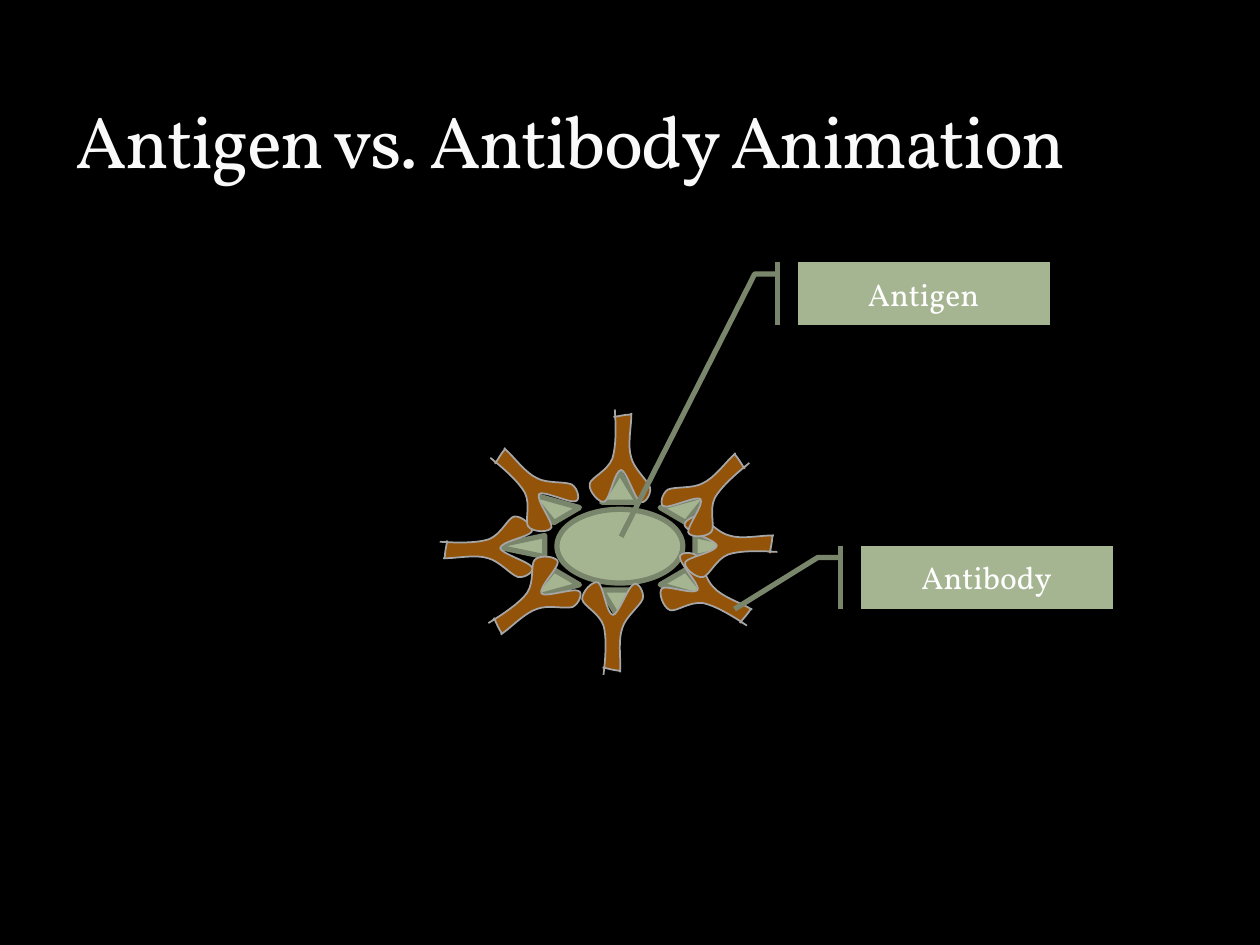
from lxml.etree import SubElement
from pptx import Presentation
from pptx.dml.color import RGBColor
from pptx.enum.shapes import MSO_SHAPE
from pptx.enum.text import MSO_ANCHOR, PP_ALIGN
from pptx.oxml.ns import qn
from pptx.util import Inches, Pt

BLACK = RGBColor(0x00, 0x00, 0x00)
TITLE_WHITE = RGBColor(0xF9, 0xF9, 0xF9)
WHITE = RGBColor(0xFF, 0xFF, 0xFF)
GREEN = RGBColor(0xA5, 0xB5, 0x92)
GREEN_LINE = RGBColor(0x7A, 0x86, 0x6C)
BROWN = RGBColor(0x93, 0x54, 0x0A)
GREY = RGBColor(0xA6, 0xA6, 0xA6)
FONT = "Vollkorn"

# Upright antibody, in inches: a start point, then Bezier segments
ANTIBODY_W, ANTIBODY_H = 0.5, 0.76
ANTIBODY_START = (0.20, 0.70)
ANTIBODY_CURVES = [
    ((0.25, 0.71), (0.30, 0.72), (0.33, 0.72)),
    ((0.35, 0.72), (0.34, 0.75), (0.34, 0.69)),
    ((0.34, 0.63), (0.31, 0.47), (0.34, 0.38)),
    ((0.36, 0.29), (0.47, 0.20), (0.49, 0.14)),
    ((0.50, 0.08), (0.44, 0.00), (0.41, 0.03)),
    ((0.37, 0.05), (0.30, 0.28), (0.26, 0.28)),
    ((0.21, 0.28), (0.17, 0.05), (0.13, 0.03)),
    ((0.09, 0.01), (0.00, 0.11), (0.01, 0.17)),
    ((0.02, 0.22), (0.15, 0.27), (0.19, 0.37)),
    ((0.22, 0.46), (0.22, 0.61), (0.21, 0.76)),
]

# Left, top, rotation, mirrored
ANTIBODIES = [
    (3.62, 3.96, 90, False),
    (3.96, 4.38, 54.9, False),
    (4.60, 4.60, 3, False),
    (5.37, 4.36, 300.1, False),
    (5.54, 3.96, 270, False),
    (5.39, 3.52, 227.6, False),
    (3.95, 3.48, 132.4, True),
    (4.67, 3.25, 180, True),
]


def style(s, fill, line, width):
    s.shadow.inherit = False
    s.fill.solid()
    s.fill.fore_color.rgb = fill
    s.line.color.rgb = line
    s.line.width = Pt(width)


def set_text(tf, text, size, color, anchor, align):
    tf.word_wrap = True
    tf.vertical_anchor = anchor
    p = tf.paragraphs[0]
    p.text = text
    p.alignment = align
    p.font.name = FONT
    p.font.size = Pt(size)
    p.font.color.rgb = color
    return p


def add_title(slide, text):
    box = slide.shapes.add_textbox(Inches(0.5), Inches(0.17), Inches(9), Inches(1.33))
    p = set_text(box.text_frame, text, 42, TITLE_WHITE, MSO_ANCHOR.BOTTOM, PP_ALIGN.LEFT)
    p.runs[0]._r.get_or_add_rPr().set("spc", "-100")


def add_antigen(slide):
    s = slide.shapes.add_shape(MSO_SHAPE.SUN, Inches(3.92), Inches(3.75), Inches(2), Inches(1.17))
    style(s, GREEN, GREEN_LINE, 3)


def draw_curves(s, width, height, start, curves):
    """Replace the straight outline of a freeform by Bezier segments."""
    outline = s._element.find(".//" + qn("a:path"))
    for child in list(outline):
        outline.remove(child)
    outline.set("w", str(Inches(width)))
    outline.set("h", str(Inches(height)))
    steps = [("a:moveTo", [start])] + [("a:cubicBezTo", c) for c in curves]
    for tag, points in steps:
        step = SubElement(outline, qn(tag))
        for x, y in points:
            SubElement(step, qn("a:pt"), x=str(Inches(x)), y=str(Inches(y)))


def add_antibody(slide, left, top, rotation, mirrored):
    builder = slide.shapes.build_freeform(0, 0)
    builder.add_line_segments([(Inches(ANTIBODY_W), Inches(ANTIBODY_H))], close=False)
    s = builder.convert_to_shape(Inches(left), Inches(top))
    draw_curves(s, ANTIBODY_W, ANTIBODY_H, ANTIBODY_START, ANTIBODY_CURVES)
    s.rotation = rotation
    if mirrored:
        s._element.spPr.xfrm.set("flipH", "1")
    style(s, BROWN, GREY, 1)


def add_callout(slide, left, top, text, tip_y, tip_x):
    s = slide.shapes.add_shape(MSO_SHAPE.LINE_CALLOUT_2_ACCENT_BAR,
                               Inches(left), Inches(top), Inches(2), Inches(0.5))
    for i, value in enumerate((0.19, -0.08, 0.19, -0.17, tip_y, tip_x)):
        s.adjustments[i] = value
    style(s, GREEN, GREEN_LINE, 3)
    set_text(s.text_frame, text, 18, WHITE, MSO_ANCHOR.MIDDLE, PP_ALIGN.CENTER)


def main():
    prs = Presentation()
    prs.slide_width, prs.slide_height = Inches(10), Inches(7.5)
    slide = prs.slides.add_slide(prs.slide_layouts[6])
    slide.background.fill.solid()
    slide.background.fill.fore_color.rgb = BLACK

    add_title(slide, "Antigen vs. Antibody Animation")

    # Antigen ringed by antibodies
    add_antigen(slide)
    for antibody in ANTIBODIES:
        add_antibody(slide, *antibody)

    # Labels
    add_callout(slide, 6.33, 2.08, "Antigen", 4.36, -0.7)
    add_callout(slide, 6.83, 4.33, "Antibody", 1.01, -0.5)

    prs.save("out.pptx")


if __name__ == "__main__":
    main()
